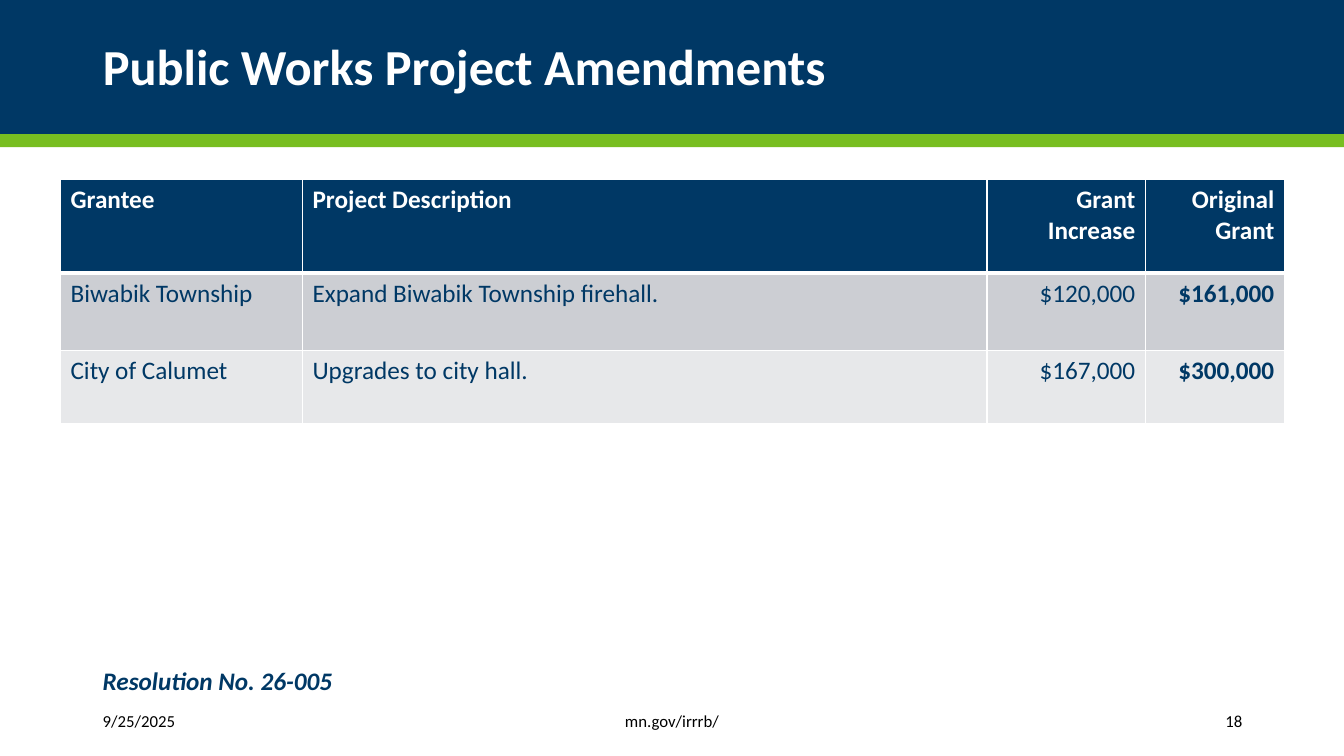
from pptx import Presentation
from pptx.dml.color import RGBColor
from pptx.enum.shapes import MSO_SHAPE
from pptx.enum.text import MSO_ANCHOR, PP_ALIGN
from pptx.oxml.ns import qn
from pptx.util import Inches, Pt
from lxml.etree import SubElement

COLORS = {"navy": "003865", "green": "78BE21", "white": "FFFFFF",
          "black": "000000", "gray": "CCCED3", "pale": "E7E8EA"}
FONT = "Calibri"
LEFT, CENTER, RIGHT = PP_ALIGN.LEFT, PP_ALIGN.CENTER, PP_ALIGN.RIGHT

TITLE = "Public Works Project Amendments"
RESOLUTION = "Resolution No. 26-005"
BANDS = [(0, 1.33, "navy"), (1.33, 0.13, "green")]
GRANTS = [
    ("Grantee", "Project Description", "Grant Increase", "Original Grant"),
    ("Biwabik Township", "Expand Biwabik Township firehall.", "$120,000", "$161,000"),
    ("City of Calumet", "Upgrades to city hall.", "$167,000", "$300,000"),
]
COLUMN_WIDTHS = [2.4, 6.79, 1.57, 1.38]
COLUMN_ALIGNS = [LEFT, LEFT, RIGHT, RIGHT]
ROW_HEIGHTS = [0.93, 0.77, 0.72]
ROW_FILLS = ["navy", "gray", "pale"]
FOOTERS = [
    ("9/25/2025", 0.92, 1.49, LEFT),
    ("mn.gov/irrrb/", 3.61, 6.11, CENTER),
    ("18", 10.82, 1.6, RIGHT),
]


def color(name):
    return RGBColor.from_string(COLORS[name])


def write(frame, text, size, ink, align=LEFT, bold=False, italic=False):
    para = frame.paragraphs[0]
    para.alignment = align
    span = para.add_run()
    span.text = text
    span.font.name = FONT
    span.font.size = Pt(size)
    span.font.bold = bold
    span.font.italic = italic
    span.font.color.rgb = color(ink)
    return para


def add_text(page, text, left, top, width, height, size, ink, anchor, **style):
    box = page.shapes.add_textbox(Inches(left), Inches(top), Inches(width), Inches(height))
    box.text_frame.word_wrap = True
    box.text_frame.vertical_anchor = anchor
    write(box.text_frame, text, size, ink, **style)


def add_borders(cell, widths):
    properties = cell._tc.get_or_add_tcPr()
    for position, (side, width) in enumerate(widths.items()):
        line = properties.makeelement(qn(f"a:{side}"), {"w": str(Pt(width))})
        fill = SubElement(line, qn("a:solidFill"))
        SubElement(fill, qn("a:srgbClr"), val=COLORS["white"])
        properties.insert(position, line)


def add_bands(page):
    for top, height, fill in BANDS:
        band = page.shapes.add_shape(MSO_SHAPE.RECTANGLE, 0, Inches(top),
                                     Inches(13.33), Inches(height))
        band.shadow.inherit = False
        band.fill.solid()
        band.fill.fore_color.rgb = color(fill)
        band.line.fill.background()


def add_title(page):
    title = page.shapes.title
    title.left, title.top = Inches(0.92), Inches(0.19)
    title.width, title.height = Inches(11.5), Inches(1)
    title.text_frame.vertical_anchor = MSO_ANCHOR.MIDDLE
    write(title.text_frame, TITLE, 36, "white", bold=True).line_spacing = 0.9
    title.element.getparent().append(title.element)


def add_grants(page):
    table = page.shapes.add_table(len(GRANTS), len(COLUMN_WIDTHS), Inches(0.6), Inches(1.78),
                                  Inches(sum(COLUMN_WIDTHS)), Inches(sum(ROW_HEIGHTS))).table
    for column, width in zip(table.columns, COLUMN_WIDTHS):
        column.width = Inches(width)
    for row, height in zip(table.rows, ROW_HEIGHTS):
        row.height = Inches(height)
    for r, texts in enumerate(GRANTS):
        header = r == 0
        for c, text in enumerate(texts):
            cell = table.cell(r, c)
            cell.fill.solid()
            cell.fill.fore_color.rgb = color(ROW_FILLS[r])
            add_borders(cell, {"lnL": 1, "lnR": 1, "lnT": 3 if r == 1 else 1,
                               "lnB": 3 if header else 1})
            write(cell.text_frame, text, 18, "white" if header else "navy",
                  COLUMN_ALIGNS[c], bold=header or c == len(texts) - 1)


def main():
    deck = Presentation()
    deck.slide_width, deck.slide_height = Inches(13.33), Inches(7.5)
    page = deck.slides.add_slide(deck.slide_layouts[5])
    add_bands(page)
    add_title(page)
    for text, left, width, align in FOOTERS:
        add_text(page, text, left, 6.95, width, 0.4, 12, "black", MSO_ANCHOR.MIDDLE, align=align)
    add_grants(page)
    add_text(page, RESOLUTION, 0.92, 6.55, 7.47, 0.4, 18, "navy", MSO_ANCHOR.TOP,
             bold=True, italic=True)
    deck.save("out.pptx")


if __name__ == "__main__":
    main()
